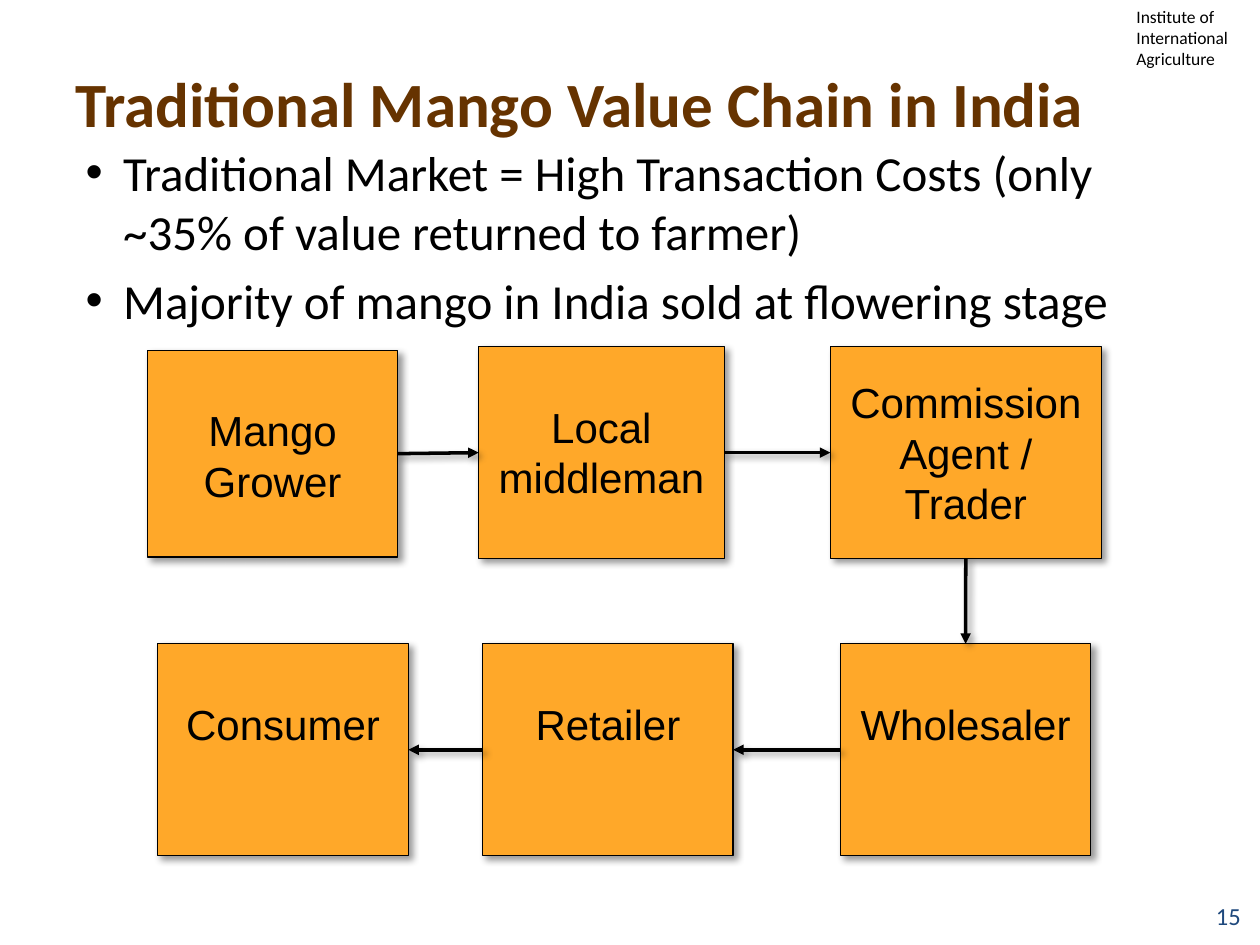
from dataclasses import dataclass

from lxml.etree import SubElement
from pptx import Presentation
from pptx.dml.color import RGBColor
from pptx.enum.shapes import MSO_CONNECTOR as Connector, MSO_SHAPE as Shape
from pptx.enum.text import MSO_ANCHOR as Anchor, MSO_AUTO_SIZE as AutoSize, PP_ALIGN as Align
from pptx.oxml.ns import qn
from pptx.util import Cm, Pt

TOP, LEFT, BOTTOM, RIGHT = range(4)


@dataclass(frozen=True)
class Theme:
    ink: RGBColor = RGBColor(0, 0, 0)
    heading: RGBColor = RGBColor(0x66, 0x33, 0x00)
    box: RGBColor = RGBColor(0xFF, 0xA8, 0x29)
    number: RGBColor = RGBColor(0x1F, 0x49, 0x7D)
    text_font: str = "Calibri"
    box_font: str = "Arial"
    title_size: Pt = Pt(36)
    list_size: Pt = Pt(28)
    box_size: Pt = Pt(24)
    number_size: Pt = Pt(14)
    header_size: Pt = Pt(10)
    outline: Pt = Pt(0.75)
    arrow: Pt = Pt(2)


@dataclass(frozen=True)
class Actor:
    """One box of the value chain, in centimetres."""
    label: str
    left: float
    top: float
    width: float = 5.05
    height: float = 4.27
    text_inset: float = 1.1


@dataclass(frozen=True)
class Step:
    """An arrow from a side of one actor to a side of the next."""
    start: str
    start_side: int
    end: str
    end_side: int


THEME = Theme()
UPPER, LOWER = 6.99, 12.98

ACTORS = {
    "grower": Actor("Mango\nGrower", 2.97, 7.06, height=4.17),
    "middleman": Actor("Local middleman", 9.65, UPPER, width=4.95),
    "agent": Actor("Commission Agent / Trader", 16.74, UPPER, width=5.46, text_inset=0.61),
    "wholesaler": Actor("Wholesaler", 16.94, LOWER),
    "retailer": Actor("Retailer", 9.73, LOWER),
    "consumer": Actor("Consumer", 3.18, LOWER),
}
STEPS = [
    Step("grower", RIGHT, "middleman", LEFT),
    Step("middleman", RIGHT, "agent", LEFT),
    Step("agent", BOTTOM, "wholesaler", TOP),
    Step("wholesaler", LEFT, "retailer", RIGHT),
    Step("retailer", LEFT, "consumer", RIGHT),
]


def place(shape, left: float, top: float, width: float, height: float) -> None:
    shape.left, shape.top, shape.width, shape.height = map(Cm, (left, top, width, height))


def write(frame, text: str, font: str, size: Pt, color: RGBColor,
          align=Align.LEFT, bold: bool = False) -> None:
    frame.text = text
    frame.word_wrap = True
    frame.auto_size = AutoSize.NONE
    for paragraph in frame.paragraphs:
        paragraph.alignment = align
        for run in paragraph.runs:
            run.font.name, run.font.size, run.font.bold = font, size, bold
            run.font.color.rgb = color


def add_label(slide, area: tuple, text: str, size: Pt, color: RGBColor, align=Align.LEFT) -> None:
    label = slide.shapes.add_textbox(*map(Cm, area))
    write(label.text_frame, text, THEME.text_font, size, color, align)


def drop_shadow(shape_properties) -> None:
    """Soft black shadow towards the lower right."""
    effects = shape_properties.find(qn("a:effectLst"))
    if effects is None:
        effects = SubElement(shape_properties, qn("a:effectLst"))
    shadow = SubElement(effects, qn("a:outerShdw"), blurRad=str(Pt(4)), dist=str(Pt(3)),
                        dir="2700000", algn="tl", rotWithShape="0")
    color = SubElement(shadow, qn("a:srgbClr"), val=str(THEME.ink))
    SubElement(color, qn("a:alpha"), val="40000")


def draw_actor(slide, actor: Actor):
    box = slide.shapes.add_shape(
        Shape.RECTANGLE, *map(Cm, (actor.left, actor.top, actor.width, actor.height)))
    box.fill.solid()
    box.fill.fore_color.rgb = THEME.box
    box.line.color.rgb = THEME.ink
    box.line.width = THEME.outline
    box.shadow.inherit = False
    drop_shadow(box.element.spPr)
    frame = box.text_frame
    write(frame, actor.label, THEME.box_font, THEME.box_size, THEME.ink, Align.CENTER)
    frame.vertical_anchor = Anchor.TOP
    frame.margin_top = Cm(actor.text_inset)
    return box


def draw_step(slide, step: Step, boxes: dict) -> None:
    arrow = slide.shapes.add_connector(Connector.STRAIGHT, 0, 0, 0, 0)
    arrow.begin_connect(boxes[step.start], step.start_side)
    arrow.end_connect(boxes[step.end], step.end_side)
    arrow.line.color.rgb = THEME.ink
    arrow.line.width = THEME.arrow
    SubElement(arrow.line._get_or_add_ln(), qn("a:tailEnd"), type="triangle")
    drop_shadow(arrow.element.spPr)


def fill_title(title) -> None:
    place(title, 1.27, 0.76, 22.86, 2.62)
    write(title.text_frame, "Traditional Mango Value Chain in India",
          THEME.text_font, THEME.title_size, THEME.heading, bold=True)
    title.text_frame.vertical_anchor = Anchor.MIDDLE


def fill_list(body) -> None:
    place(body, 1.47, 2.74, 22.86, 4.01)
    points = ["Traditional Market = High Transaction Costs (only ~35% of value returned to farmer)",
              "Majority of mango in India sold at flowering stage"]
    write(body.text_frame, "\n".join(points), THEME.text_font, THEME.list_size, THEME.ink)
    for index, paragraph in enumerate(body.text_frame.paragraphs):
        paragraph.space_before = Pt(6 if index else 0)
        properties = paragraph._p.get_or_add_pPr()
        properties.set("marL", str(Cm(0.76)))
        properties.set("indent", str(-Cm(0.76)))
        SubElement(properties, qn("a:buChar"), char="•")


def main() -> None:
    deck = Presentation()
    deck.slide_width, deck.slide_height = Cm(25.4), Cm(19.05)
    slide = deck.slides.add_slide(deck.slide_layouts[1])

    # Header, title and key points
    add_label(slide, (22.66, 0, 2.74, 1.32), "Institute of\nInternational\nAgriculture",
              THEME.header_size, THEME.ink)
    fill_title(slide.shapes.title)
    fill_list(slide.placeholders[1])

    # Value chain
    boxes = {key: draw_actor(slide, actor) for key, actor in ACTORS.items()}
    for step in STEPS:
        draw_step(slide, step, boxes)

    # Page number
    add_label(slide, (24.13, 18.03, 1.27, 1.02), "15",
              THEME.number_size, THEME.number, Align.CENTER)

    deck.save("out.pptx")


if __name__ == "__main__":
    main()
